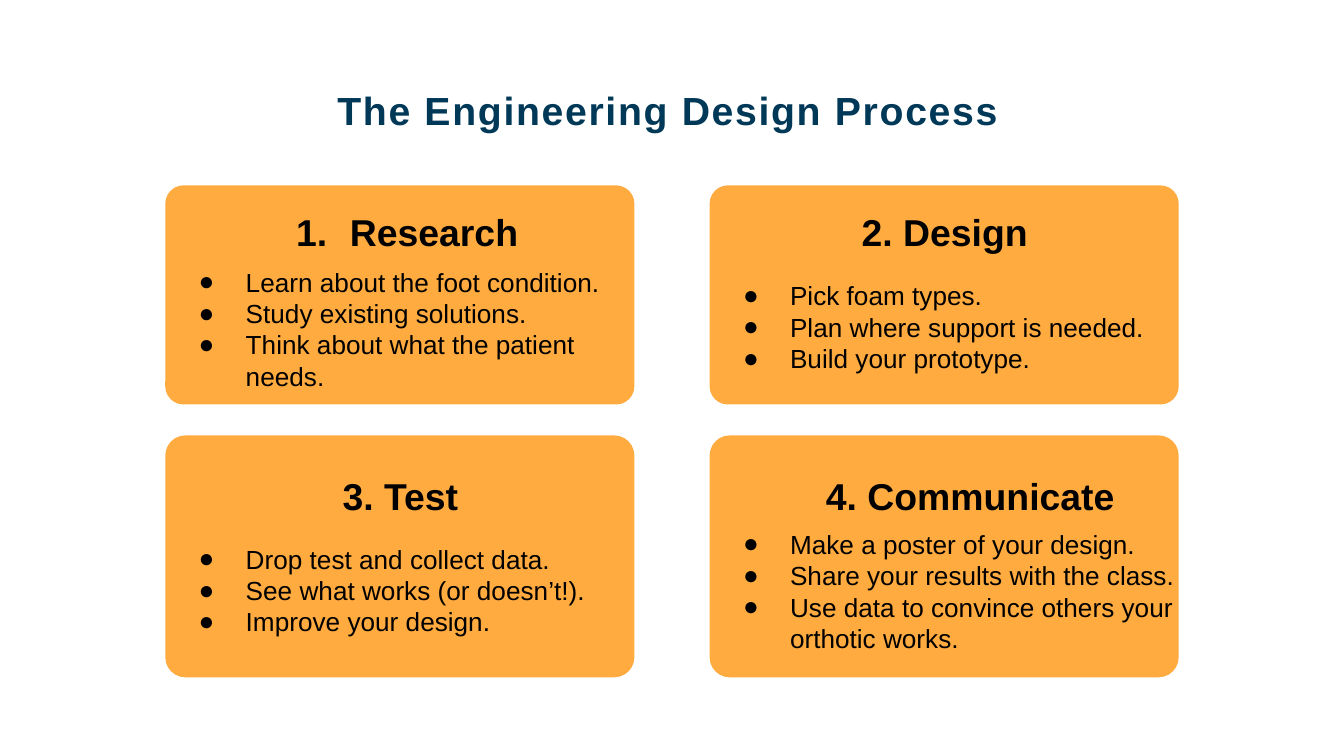
from lxml.etree import SubElement
from pptx import Presentation
from pptx.dml.color import RGBColor
from pptx.enum.shapes import MSO_SHAPE as Shape
from pptx.enum.text import MSO_ANCHOR as Anchor, MSO_AUTO_SIZE as AutoSize, PP_ALIGN as Align
from pptx.oxml.ns import qn
from pptx.util import Inches, Pt

NAVY = RGBColor(0x00, 0x38, 0x57)
ORANGE = RGBColor(0xFF, 0xAB, 0x40)
BLACK = RGBColor(0x00, 0x00, 0x00)

TITLE = "The Engineering Design Process"
STEPS = [
    dict(heading="Research", number=True, heading_width=2.3, list_drop=0.42, list_width=3.49,
         items=["Learn about the foot condition.", "Study existing solutions.",
                "Think about what the patient needs."]),
    dict(heading="2. Design", number=False, heading_width=2.3, list_drop=0.52, list_width=3.49,
         items=["Pick foam types.", "Plan where support is needed.", "Build your prototype."]),
    dict(heading="3. Test", number=False, heading_width=2.3, list_drop=0.52, list_width=3.49,
         items=["Drop test and collect data.", "See what works (or doesn’t!).",
                "Improve your design."]),
    dict(heading="4. Communicate", number=False, heading_width=2.68, list_drop=0.41, list_width=3.62,
         items=["Make a poster of your design.", "Share your results with the class.",
                "Use data to convince others your orthotic works."]),
]
COLUMNS = [1.23, 5.28]
ROWS = [dict(top=1.38, height=1.63, heading_top=1.46),
        dict(top=3.24, height=1.8, heading_top=3.42)]
SLIDE_WIDTH = Inches(10)
SLIDE_HEIGHT = SLIDE_WIDTH * 9 // 16
CARD_WIDTH = 3.49
HEADING_INSET = 0.6


def add_marker(para, tag, indent, **attributes):
    """Give a paragraph a hanging indent and a black bullet or number."""
    props = para._p.get_or_add_pPr()
    props.set("marL", str(Inches(0.5)))
    props.set("indent", str(-Inches(indent)))
    color = SubElement(props, qn("a:buClr"))
    SubElement(color, qn("a:srgbClr"), val=str(BLACK))
    SubElement(props, qn("a:buFont"), typeface="Arial")
    SubElement(props, qn(tag), **attributes)


def write(box, lines, size, color=BLACK, bold=False, align=Align.LEFT, spacing=None, marker=None):
    """Fill a box with one formatted paragraph per line."""
    frame = box.text_frame
    frame.word_wrap = True
    frame.auto_size = AutoSize.NONE
    frame.vertical_anchor = Anchor.TOP
    frame.margin_left = frame.margin_right = Inches(0.1)
    frame.margin_top = frame.margin_bottom = Inches(0.1)
    for index, line in enumerate(lines):
        para = frame.add_paragraph() if index else frame.paragraphs[0]
        para.alignment = align
        if spacing:
            para.line_spacing = spacing
        if marker:
            add_marker(para, **marker)
        span = para.add_run()
        span.text = line
        span.font.name = "Arial"
        span.font.size = Pt(size)
        span.font.bold = bold
        span.font.color.rgb = color


def add_text(page, left, top, width, height, lines, **formatting):
    """Add a text box, measured in inches."""
    box = page.shapes.add_textbox(Inches(left), Inches(top), Inches(width), Inches(height))
    write(box, lines, **formatting)


def add_step(page, step, left, row):
    """Add one card with its heading and list."""
    card = page.shapes.add_shape(Shape.ROUNDED_RECTANGLE, Inches(left), Inches(row["top"]),
                                 Inches(CARD_WIDTH), Inches(row["height"]))
    card.adjustments[0] = 0.083
    card.shadow.inherit = False
    card.fill.solid()
    card.fill.fore_color.rgb = ORANGE
    card.line.fill.background()

    number = dict(tag="a:buAutoNum", indent=0.4, type="arabicPeriod") if step["number"] else None
    add_text(page, left + HEADING_INSET, row["heading_top"], step["heading_width"], 0.42,
             [step["heading"]], size=20, bold=True, align=Align.CENTER, marker=number)
    add_text(page, left, row["heading_top"] + step["list_drop"], step["list_width"], 0.79,
             step["items"], size=14, marker=dict(tag="a:buChar", indent=0.35, char="●"))


def main():
    """Build the slide and save it."""
    deck = Presentation()
    deck.slide_width, deck.slide_height = SLIDE_WIDTH, SLIDE_HEIGHT
    page = deck.slides.add_slide(deck.slide_layouts[5])

    title = page.shapes.title
    title.left, title.top = Inches(0.38), Inches(0.49)
    title.width, title.height = Inches(9.18), Inches(0.75)
    write(title, [TITLE], size=21, color=NAVY, bold=True, align=Align.CENTER, spacing=1.15)
    title.text_frame.paragraphs[0].runs[0].font._element.set("spc", "90")

    for index, step in enumerate(STEPS):
        row, column = divmod(index, len(COLUMNS))
        add_step(page, step, COLUMNS[column], ROWS[row])
    deck.save("out.pptx")


if __name__ == "__main__":
    main()
